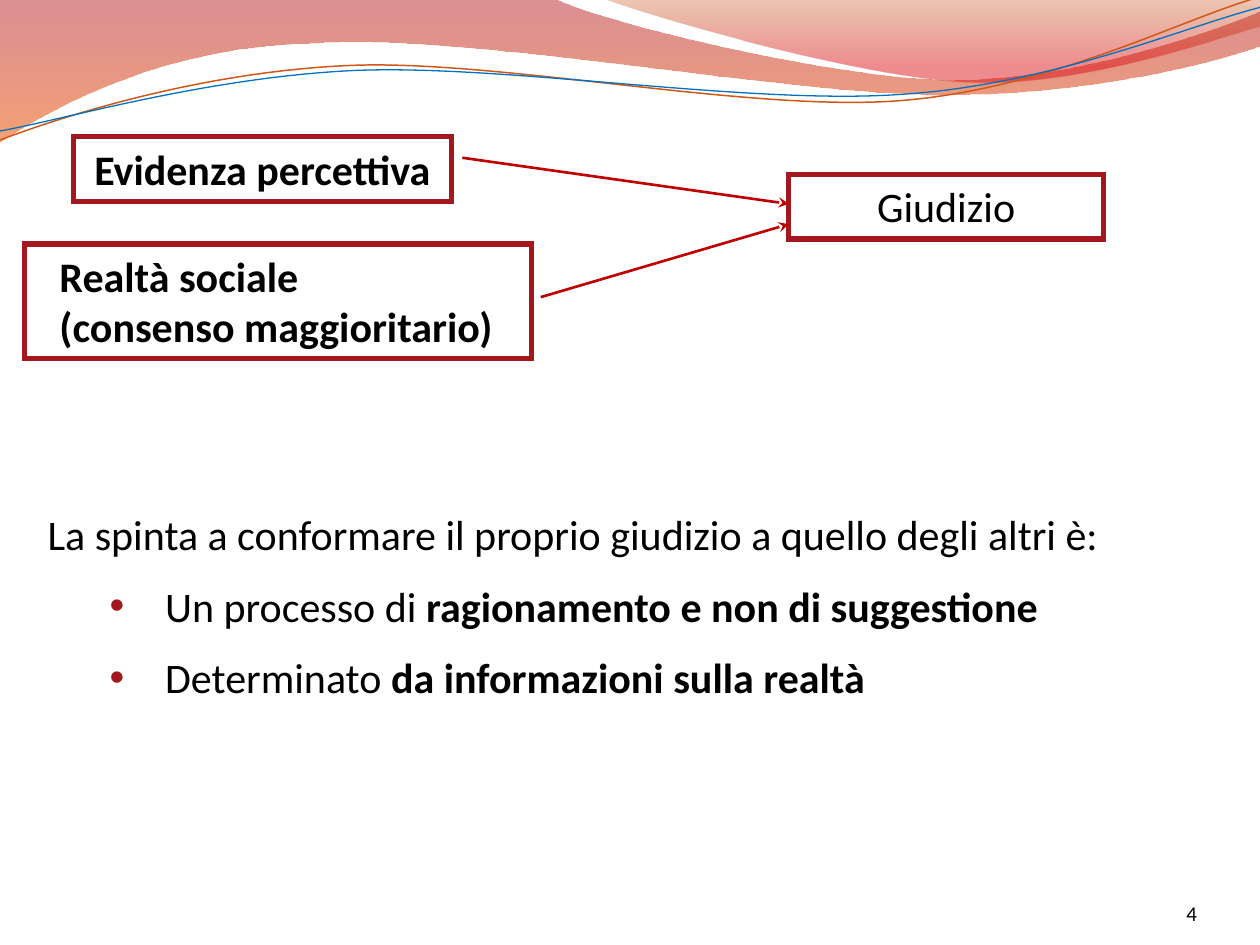
from dataclasses import dataclass
from math import cos, radians, sin

from lxml.etree import SubElement
from pptx import Presentation
from pptx.dml.color import RGBColor as Color
from pptx.enum.shapes import MSO_CONNECTOR as Link, MSO_SHAPE as Preset
from pptx.enum.text import MSO_ANCHOR as Anchor, PP_ALIGN as Align
from pptx.oxml.ns import qn
from pptx.util import Cm, Pt


@dataclass(frozen=True)
class Theme:
    font: str = "Calibri"
    body: int = 24
    small: int = 12
    text: str = "000000"
    frame: str = "A3171E"
    arrow: str = "C00000"
    orange: str = "CF5818"
    blue: str = "0070C0"
    wave: tuple = ((0, "AF0911", 45), (1, "EE5300", 55))
    crest: tuple = ((0, "C24400", 30), (0.8, "DC000B", 45))


theme = Theme()
deck = Presentation()
deck.slide_width, deck.slide_height = Cm(25.4), Cm(19.05)
page = deck.slides.add_slide(deck.slide_layouts[6])


def write(para, text, size=theme.body, bold=False, align=Align.LEFT):
    para.alignment = align
    for index, line in enumerate(text.split("\n")):
        if index:
            para.add_line_break()
        span = para.add_run()
        span.text = line
        span.font.name = theme.font
        span.font.size = Pt(size)
        span.font.bold = bold
        span.font.color.rgb = Color.from_string(theme.text)


def trace(segments, close, tilt=0, pivot=(0, 0)):
    turn, (px, py) = radians(tilt), pivot
    routes = [[(Cm(px + (x - px) * cos(turn) - (y - py) * sin(turn)),
                Cm(py + (x - px) * sin(turn) + (y - py) * cos(turn)))
               for x, y in zip(segment[::2], segment[1::2])] for segment in segments]
    builder = page.shapes.build_freeform(*routes[0][0], scale=1.0)
    builder.add_line_segments([route[-1] for route in routes[1:]], close=close)
    shape = builder.convert_to_shape()
    shape.shadow.inherit = False
    lines = list(shape._element.iter(qn("a:lnTo")))
    for line, route in zip(lines, routes[1:]):
        if len(route) == 3:
            line.tag = qn("a:cubicBezTo")
            line.remove(line[0])
            for x, y in route:
                SubElement(line, qn("a:pt"), x=str(x - shape.left), y=str(y - shape.top))
    shape.rotation = -tilt
    return shape


waves = [
    (theme.wave, [
        (0, 0),
        (11.18, -0.03),
        (12.09, 0.43, 16.87, 1.6, 19.25, 1.6),
        (21.67, 1.6, 24.33, 0.66, 25.4, 0.23),
        (25.43, 0.91),
        (24.97, 1.12, 22.1, 1.93, 18.95, 1.91),
        (15.8, 1.9, 9.7, 0.71, 6.53, 0.86),
        (3.28, 0.91, 1.17, 2.11, -0.03, 2.87)]),
    (theme.crest, [
        (12.17, -0.03),
        (12.93, 0.28, 17.32, 1.57, 19.53, 1.65),
        (21.74, 1.75, 24.41, 0.81, 25.4, 0.53),
        (25.4, 0)]),
]
for stops, segments in waves:
    wave = trace(segments, close=True)
    wave.line.fill.background()
    wave.fill.gradient()
    wave.fill.gradient_angle = 270
    tints = list(wave._element.spPr.iter(qn("a:srgbClr")))
    for stop, (position, color, alpha) in zip(wave.fill.gradient_stops, stops):
        stop.position = position
        stop.color.rgb = Color.from_string(color)
    tints = list(wave._element.spPr.iter(qn("a:srgbClr")))
    for tint, (position, color, alpha) in zip(tints, stops):
        SubElement(tint, qn("a:alpha"), val=str(alpha * 1000))

strands = [
    (theme.orange, 0.85, (12.67, 1.46), [
        (0, 2.82),
        (1.22, 2.36, 4.01, 1.45, 7.04, 1.32),
        (10.03, 1.19, 15.06, 2.26, 18.11, 2.03),
        (21.16, 1.8, 23.83, 0.38, 25.35, -0.05)]),
    (theme.blue, 0.75, (12.69, 1.5), [
        (0, 2.64),
        (1.19, 2.44, 4.17, 1.55, 7.19, 1.42),
        (10.24, 1.3, 15.16, 2.13, 18.21, 1.9),
        (21.23, 1.7, 23.9, 0.53, 25.4, 0.15)]),
]
for color, width, pivot, segments in strands:
    strand = trace(segments, close=False, tilt=2.7, pivot=pivot)
    strand.fill.background()
    strand.line.color.rgb = Color.from_string(color)
    strand.line.width = Pt(width)

number = page.shapes.add_textbox(Cm(22.02), Cm(17.65), Cm(2.11), Cm(1.02)).text_frame
number.word_wrap = True
number.vertical_anchor = Anchor.BOTTOM
number.margin_left = number.margin_right = number.margin_top = number.margin_bottom = 0
write(number.paragraphs[0], "4", size=theme.small, align=Align.RIGHT)

body = page.shapes.add_textbox(Cm(0.71), Cm(10.13), Cm(23.7), Cm(4.37)).text_frame
body.word_wrap = True
write(body.paragraphs[0], "La spinta a conformare il proprio giudizio a quello degli altri è:")
for plain, strong in [("Un processo di ", "ragionamento e non di suggestione"),
                      ("Determinato ", "da informazioni sulla realtà")]:
    para = body.add_paragraph()
    para.level = 1
    para.space_before = Pt(12)
    write(para, plain, align=Align.JUSTIFY)
    write(para, strong, bold=True, align=Align.JUSTIFY)
    layout = para._p.get_or_add_pPr()
    layout.set("marL", str(Cm(2.37)))
    layout.set("indent", str(Cm(-1.12)))
    tint = SubElement(layout, qn("a:buClr"))
    SubElement(tint, qn("a:srgbClr"), val=theme.frame)
    SubElement(layout, qn("a:buFont"), typeface="Arial")
    SubElement(layout, qn("a:buChar"), char="•")

frames = [
    ("Evidenza percettiva", 1.48, 2.76, 7.62, 1.3, True, Align.CENTER, 0.25),
    ("Giudizio", 15.9, 3.52, 6.35, 1.3, False, Align.CENTER, 0.25),
    ("Realtà sociale\n(consenso maggioritario)", 0.5, 4.92, 10.21, 2.31, True, Align.LEFT, 0.7),
]
for text, left, top, width, height, bold, align, margin in frames:
    box = page.shapes.add_shape(Preset.RECTANGLE, Cm(left), Cm(top), Cm(width), Cm(height))
    box.shadow.inherit = False
    box.fill.background()
    box.line.color.rgb = Color.from_string(theme.frame)
    box.line.width = Pt(3)
    SubElement(box.line._get_or_add_ln(), qn("a:miter"), lim="800000")
    box.text_frame.word_wrap = True
    box.text_frame.vertical_anchor = Anchor.TOP
    box.text_frame.margin_left = Cm(margin)
    write(box.text_frame.paragraphs[0], text, bold=bold, align=align)

for x, y, end in [(9.32, 3.18, 4.11), (10.9, 5.99, 4.52)]:
    arrow = page.shapes.add_connector(Link.STRAIGHT, Cm(x), Cm(y), Cm(15.9), Cm(end))
    arrow.line.color.rgb = Color.from_string(theme.arrow)
    arrow.line.width = Pt(1.5)
    SubElement(arrow.line._get_or_add_ln(), qn("a:tailEnd"), type="stealth")
    SubElement(arrow._element.spPr, qn("a:effectLst"))

deck.save("out.pptx")
